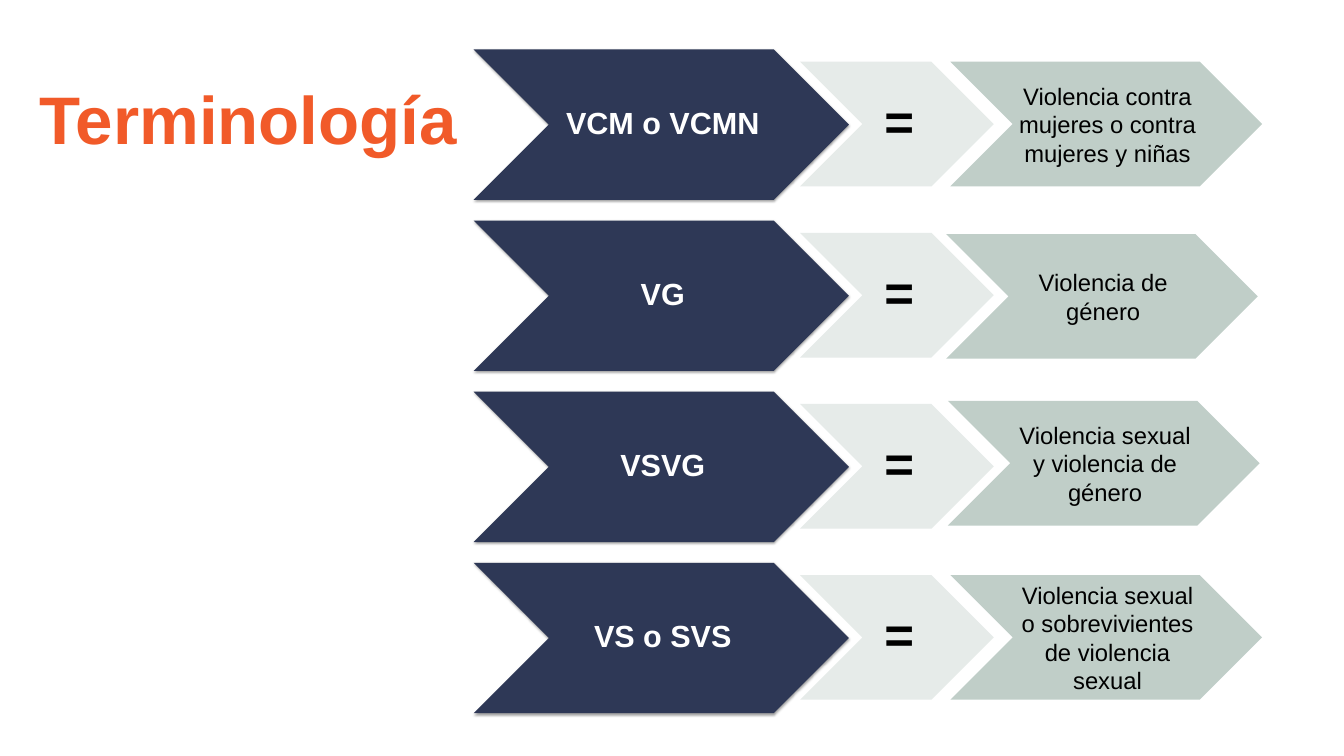
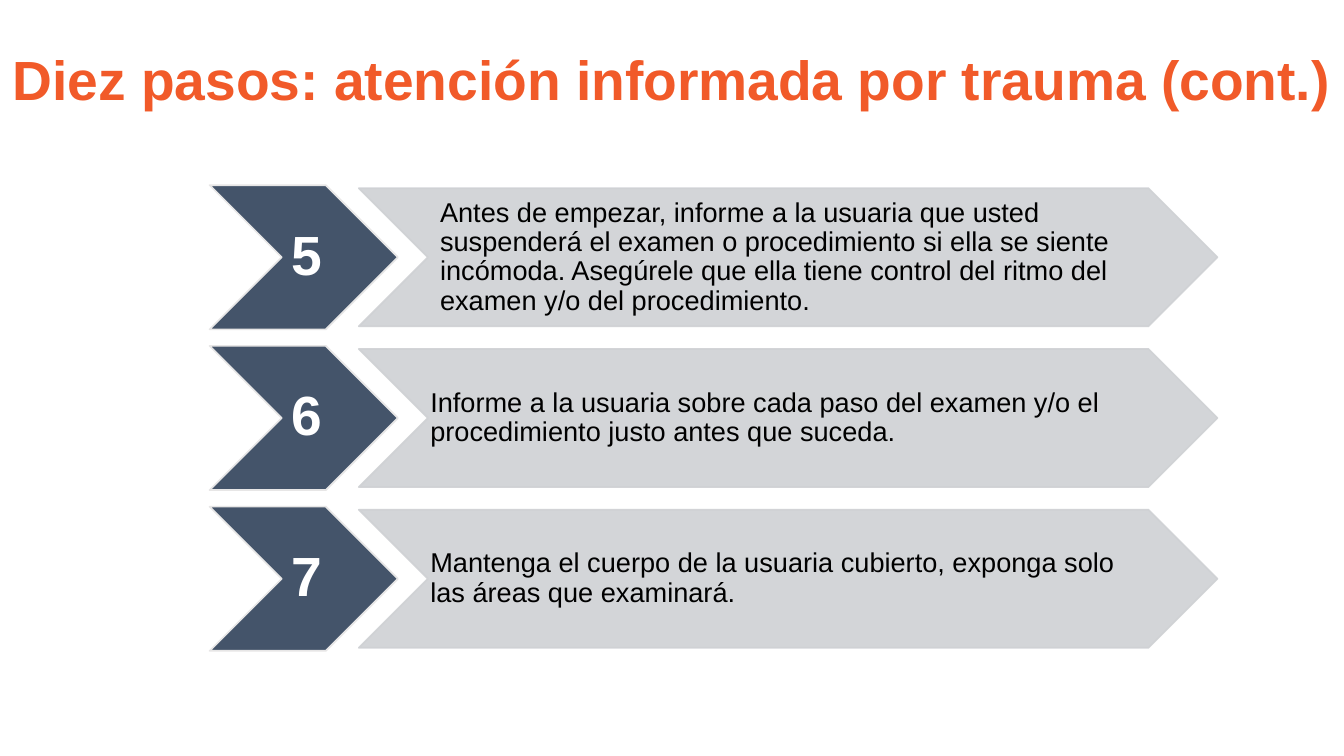
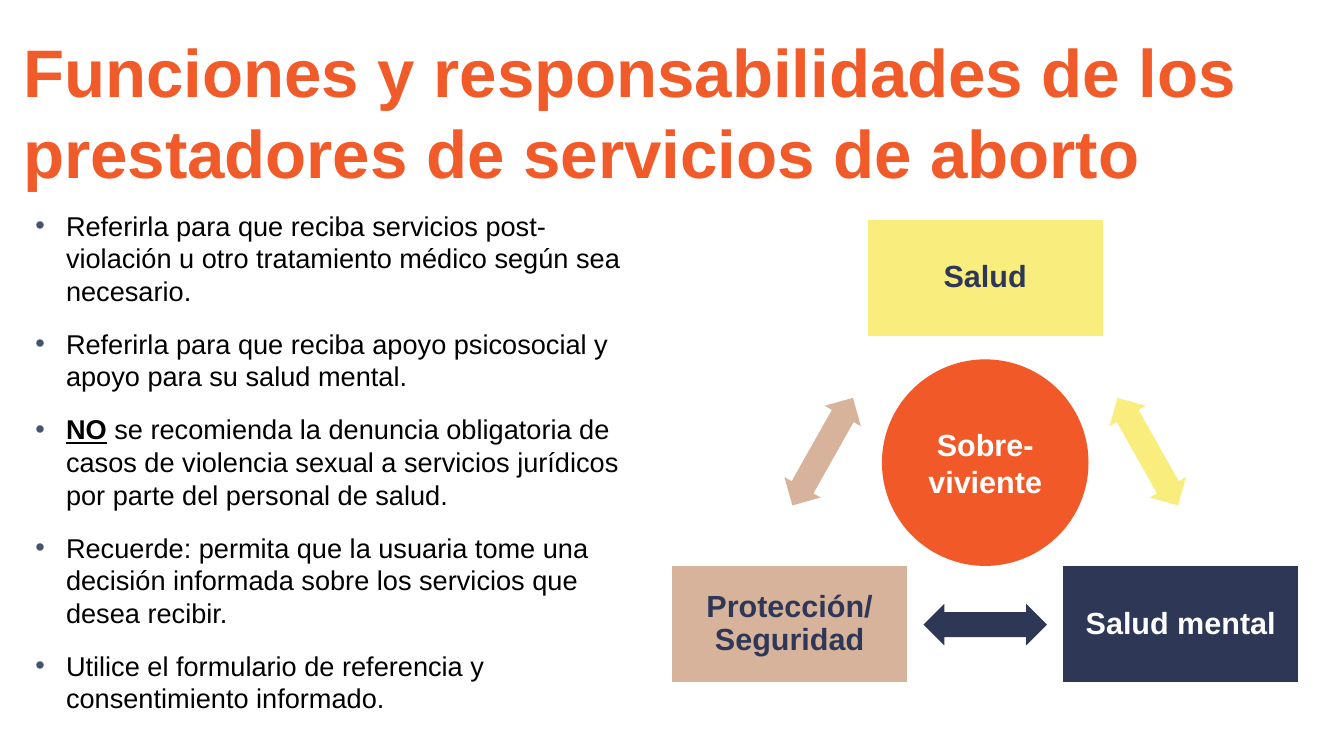
from dataclasses import dataclass

from lxml.etree import SubElement
from pptx import Presentation
from pptx.dml.color import RGBColor
from pptx.enum.shapes import MSO_SHAPE
from pptx.enum.text import MSO_ANCHOR, PP_ALIGN
from pptx.oxml.ns import qn
from pptx.util import Inches, Pt


@dataclass(frozen=True)
class Theme:
    font: str = "Arial"
    orange: str = "F15A29"
    circle_orange: str = "F15928"
    navy: str = "2E3856"
    slate: str = "44546A"
    pale: str = "E6EBE9"
    sage: str = "C0CEC8"
    gray: str = "CFD1D4"
    edge: str = "E7E6E6"
    yellow: str = "F9ED7D"
    tan: str = "D8B39C"
    white: str = "FFFFFF"
    black: str = "000000"
    title: float = 79.2
    number: float = 65
    equals: float = 60
    label: float = 36
    body: float = 32
    meaning: float = 28


THEME = Theme()

# Abbreviation, meaning, and the shift of the meaning chevron from its row
TERMS = [
    ("VCM o VCMN", "Violencia contra mujeres o contra mujeres y niñas", 0, 0),
    ("VG", "Violencia de género", -0.07, 0.02),
    ("VSVG", "Violencia sexual y violencia de género", -0.04, -0.05),
    ("VS o SVS", "Violencia sexual o sobrevivientes de violencia sexual", 0, 0),
]

SNUG = (0.04, 0.02, 0, 0.02)
ROOMY = (0.2, 0.2, 0.2, 0.2)
STEPS = [
    ("5", "Antes de empezar, informe a la usuaria que usted suspenderá el examen o "
          "procedimiento si ella se siente incómoda. Asegúrele que ella tiene control "
          "del ritmo del examen y/o del procedimiento.", ROOMY),
    ("6", "Informe a la usuaria sobre cada paso del examen y/o el procedimiento justo "
          "antes que suceda.", SNUG),
    ("7", "Mantenga el cuerpo de la usuaria cubierto, exponga solo las áreas que "
          "examinará.", SNUG),
]

# Emphasised opening, rest of the text
DUTIES = [
    ("", "Referirla para que reciba servicios post-violación u otro tratamiento médico "
         "según sea necesario."),
    ("", "Referirla para que reciba apoyo psicosocial y apoyo para su salud mental."),
    ("NO", " se recomienda la denuncia obligatoria de casos de violencia sexual a "
           "servicios jurídicos por parte del personal de salud."),
    ("", "Recuerde: permita que la usuaria tome una decisión informada sobre los "
         "servicios que desea recibir."),
    ("", "Utilice el formulario de referencia y consentimiento informado."),
]

# Label, horizontal offset from the circle, top, fill, text colour
SERVICES = [
    ("Salud", 0, 3.58, THEME.yellow, THEME.navy),
    ("Salud mental", 3.2, 9.25, THEME.navy, THEME.white),
    ("Protección/\nSeguridad", -3.2, 9.25, THEME.tan, THEME.navy),
]
# Horizontal offset from the circle, top, rotation, fill
ARROWS = [
    (2.66, 7.05, 60.6, THEME.yellow),
    (0, 9.88, 0, THEME.navy),
    (-2.66, 7.05, 299.4, THEME.tan),
]


def color(code):
    return RGBColor.from_string(code)


def set_font(font, size, code, bold=False):
    font.name, font.size, font.bold = THEME.font, Pt(size), bold
    font.color.rgb = color(code)


def set_frame(frame, insets, anchor):
    frame.word_wrap = True
    frame.vertical_anchor = anchor
    (frame.margin_left, frame.margin_top,
     frame.margin_right, frame.margin_bottom) = map(Inches, insets)


def write(shape, text, size, code, bold=False, align=PP_ALIGN.CENTER,
          insets=(0.1, 0.1, 0.1, 0.1), spacing=0.9, anchor=MSO_ANCHOR.MIDDLE):
    """Put one paragraph of uniform text in a shape."""
    set_frame(shape.text_frame, insets, anchor)
    para = shape.text_frame.paragraphs[0]
    para.text = text
    para.alignment = align
    para.line_spacing = spacing
    set_font(para.font, size, code, bold)


def add_title(page, text, at, size=THEME.title, align=PP_ALIGN.LEFT, inset=(0.1,) * 4):
    box = page.shapes.add_textbox(*map(Inches, at))
    write(box, text, size, THEME.orange, True, align, inset, 1.0, MSO_ANCHOR.TOP)


def set_alpha(fill_parent, percent):
    for tone in fill_parent.iter(qn("a:srgbClr")):
        SubElement(tone, qn("a:alpha"), val=str(percent * 1000))


def add_filled(page, kind, at, fill, line=None):
    shape = page.shapes.add_shape(kind, *map(Inches, at))
    shape.shadow.inherit = False
    shape.fill.solid()
    shape.fill.fore_color.rgb = color(fill)
    if line:
        shape.line.color.rgb = color(line)
        shape.line.width = Pt(2)
    else:
        shape.line.fill.background()
    return shape


def add_soft_shadow(shape):
    effects = shape.element.spPr.find(qn("a:effectLst"))
    shadow = SubElement(effects, qn("a:outerShdw"), blurRad=str(Pt(3.1)),
                        dist=str(Pt(1.6)), dir="5400000", algn="ctr", rotWithShape="0")
    tone = SubElement(shadow, qn("a:srgbClr"), val=THEME.black)
    SubElement(tone, qn("a:alpha"), val="38000")


def build_terms(page):
    add_title(page, "Terminología", (0.49, 1.18, 16.83, 3.02),
              inset=(0.16, 0.08, 0.16, 0.08))
    for row, (term, meaning, shift_x, shift_y) in enumerate(TERMS):
        top = 0.81 + 2.8 * row
        term_box = add_filled(page, MSO_SHAPE.CHEVRON, (7.75, top, 6.14, 2.46), THEME.navy)
        add_soft_shadow(term_box)
        write(term_box, term, THEME.label, THEME.white, True, insets=(0.05, 0.03, 0, 0.03))
        equals_box = add_filled(page, MSO_SHAPE.CHEVRON, (13.09, top + 0.2, 3.17, 2.04),
                                THEME.pale)
        write(equals_box, "=", THEME.equals, THEME.black, True, insets=(0.08, 0.04, 0, 0.04))
        meaning_box = add_filled(page, MSO_SHAPE.CHEVRON,
                                 (15.55 + shift_x, top + 0.2 + shift_y, 5.1, 2.04), THEME.sage)
        write(meaning_box, meaning, THEME.meaning, THEME.black, insets=SNUG, spacing=1.0)


def build_steps(page):
    for row, (number, advice, insets) in enumerate(STEPS):
        top = 3.03 + 2.63 * row
        number_box = add_filled(page, MSO_SHAPE.CHEVRON, (3.43, top, 3.08, 2.36),
                                THEME.slate, THEME.edge)
        write(number_box, number, THEME.number, THEME.white, True,
              insets=(0.09, 0.05, 0, 0.05))
        advice_box = add_filled(page, MSO_SHAPE.CHEVRON, (5.87, top + 0.05, 14.05, 2.26),
                                THEME.gray, THEME.gray)
        set_alpha(advice_box.element.spPr, 90)
        write(advice_box, advice, THEME.body, THEME.black, align=PP_ALIGN.LEFT, insets=insets)
    add_title(page, "Diez pasos: atención informada por trauma (cont.)",
              (0, 0.64, 21.99, 1.21), THEME.number, PP_ALIGN.CENTER)


def add_bullet(para):
    properties = para._p.get_or_add_pPr()
    properties.set("marL", str(Inches(0.5)))
    properties.set("indent", str(-Inches(0.5)))
    bullet_color = SubElement(properties, qn("a:buClr"))
    SubElement(bullet_color, qn("a:srgbClr"), val=THEME.slate)
    SubElement(properties, qn("a:buFont"), typeface=THEME.font)
    SubElement(properties, qn("a:buChar"), char="•")


def add_duties(page):
    box = page.shapes.add_textbox(*map(Inches, (0.58, 3.42, 9.81, 8.68)))
    frame = box.text_frame
    set_frame(frame, (0, 0, 0, 0), MSO_ANCHOR.TOP)
    for index, (emphasis, text) in enumerate(DUTIES):
        para = frame.add_paragraph() if index else frame.paragraphs[0]
        add_bullet(para)
        para.space_after = Pt(24)
        set_font(para.font, THEME.body, THEME.black)
        if emphasis:
            span = para.add_run()
            span.text = emphasis
            span.font.bold = span.font.underline = True
        para.add_run().text = text


def build_duties(page):
    add_duties(page)
    add_title(page, "Funciones y responsabilidades de los prestadores de servicios de aborto",
              (0.28, 0.4, 20.23, 3.02))
    center = 16.12
    for label, offset, top, fill, text_color in SERVICES:
        width = 3.87
        box = add_filled(page, MSO_SHAPE.RECTANGLE,
                         (center + offset - width / 2, top, width, 1.93), fill, THEME.white)
        write(box, label, THEME.label, text_color, True, insets=(0.15,) * 4)
    for offset, top, rotation, fill in ARROWS:
        width = 2.02
        arrow = add_filled(page, MSO_SHAPE.LEFT_RIGHT_ARROW,
                           (center + offset - width / 2, top, width, 0.68), fill)
        arrow.adjustments[0], arrow.adjustments[1] = 0.6, 0.5
        arrow.rotation = rotation
    diameter = 3.38
    circle = add_filled(page, MSO_SHAPE.OVAL,
                        (center - diameter / 2, 5.88, diameter, diameter), THEME.circle_orange)
    write(circle, "Sobre-viviente", THEME.label, THEME.white, True,
          insets=(0.1, 0.05, 0.1, 0.05), spacing=1.0)


def main():
    deck = Presentation()
    deck.slide_width, deck.slide_height = Inches(21.99), Inches(12.37)
    for build in (build_terms, build_steps, build_duties):
        build(deck.slides.add_slide(deck.slide_layouts[6]))
    deck.save("out.pptx")


if __name__ == "__main__":
    main()
